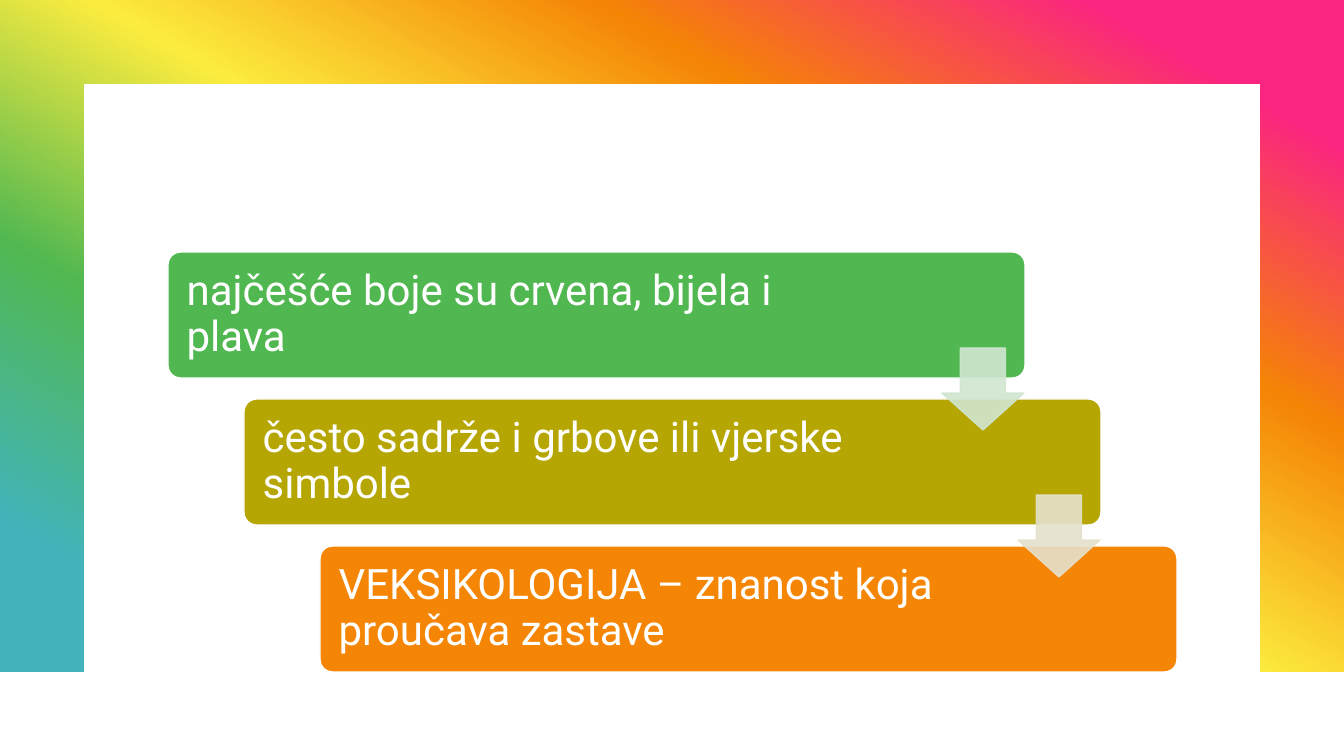
from dataclasses import dataclass

from lxml import etree
from pptx import Presentation
from pptx.dml.color import RGBColor
from pptx.enum.shapes import MSO_SHAPE
from pptx.enum.text import MSO_ANCHOR, PP_ALIGN
from pptx.oxml.ns import qn
from pptx.util import Pt

RECT = MSO_SHAPE.RECTANGLE
ROUND = MSO_SHAPE.ROUNDED_RECTANGLE
ARROW = MSO_SHAPE.DOWN_ARROW
MIDDLE = MSO_ANCHOR.MIDDLE
LEFT = PP_ALIGN.LEFT

STEPS = [
    ("najčešće boje su crvena, bijela i plava", "51B851", 145),
    ("često sadrže i grbove ili vjerske simbole", "B5A603", 174),
    ("VEKSIKOLOGIJA – znanost koja proučava zastave", "F58505", 174),
]
ARROW_COLORS = ["D0E6D0", "E5E1CC"]
RAINBOW = [(10, "FA2481"), (30, "F58505"), (50, "FCEC3F"), (70, "51B851"), (90, "42B3BD")]

SLIDE_W, SLIDE_H = 1344, 756
MARGIN = 84
BAND_H = 672
BOX = (168, 252, 857, 126)
ARROW_BOX = (942, 348, 82, 82)
STEP_X, STEP_Y = 76, 147
INSET_LEFT, INSET_Y = 15, 15
EMU_PER_PX = 12192000 / SLIDE_W


@dataclass(frozen=True)
class Theme:
    font: str = "Roboto"
    size: int = 30
    white: str = "FFFFFF"
    line: int = 1
    arrow_alpha: int = 90


theme = Theme()


def px(n):
    return round(n * EMU_PER_PX)


def rgb(code):
    return RGBColor.from_string(code)


def add_shape(slide, kind, box, color, line=None):
    sp = slide.shapes.add_shape(kind, *map(px, box))
    sp.shadow.inherit = False
    sp.fill.solid()
    sp.fill.fore_color.rgb = rgb(color)
    if line:
        sp.line.color.rgb = rgb(line)
        sp.line.width = Pt(theme.line)
    else:
        sp.line.fill.background()
    return sp


def set_gradient(sp, stops):
    sp.fill.gradient()
    sp.fill.gradient_angle = 240
    stop_list = sp._element.spPr.find(qn("a:gradFill")).find(qn("a:gsLst"))
    for old in list(stop_list):
        stop_list.remove(old)
    for position, color in stops:
        gs = etree.SubElement(stop_list, qn("a:gs"), pos=str(position * 1000))
        etree.SubElement(gs, qn("a:srgbClr"), val=color)


def set_alpha(sp, percent):
    for color in sp._element.spPr.iter(qn("a:srgbClr")):
        etree.SubElement(color, qn("a:alpha"), val=str(percent * 1000))


def set_text(sp, text, inset_right):
    tf = sp.text_frame
    tf.text = text
    tf.word_wrap = True
    tf.vertical_anchor = MIDDLE
    tf.margin_left, tf.margin_right = px(INSET_LEFT), px(inset_right)
    tf.margin_top = tf.margin_bottom = px(INSET_Y)
    p = tf.paragraphs[0]
    p.alignment = LEFT
    p.line_spacing = 0.9
    r = p.runs[0]
    r.font.name = theme.font
    r.font.size = Pt(theme.size)
    r.font.color.rgb = rgb(theme.white)


def shifted(box, i):
    x, y, w, h = box
    return x + i * STEP_X, y + i * STEP_Y, w, h


def main():
    prs = Presentation()
    prs.slide_width, prs.slide_height = px(SLIDE_W), px(SLIDE_H)
    slide = prs.slides.add_slide(prs.slide_layouts[6])

    band = add_shape(slide, RECT, (0, 0, SLIDE_W, BAND_H), theme.white)
    set_gradient(band, RAINBOW)
    panel = (MARGIN, MARGIN, SLIDE_W - 2 * MARGIN, BAND_H - MARGIN)
    add_shape(slide, RECT, panel, theme.white)

    for i, (text, color, inset_right) in enumerate(STEPS):
        sp = add_shape(slide, ROUND, shifted(BOX, i), color, theme.white)
        sp.adjustments[0] = 0.1
        set_text(sp, text, inset_right)

    for i, color in enumerate(ARROW_COLORS):
        sp = add_shape(slide, ARROW, shifted(ARROW_BOX, i), color, color)
        sp.adjustments[0], sp.adjustments[1] = 0.55, 0.45
        set_alpha(sp, theme.arrow_alpha)

    prs.save("out.pptx")


if __name__ == "__main__":
    main()
